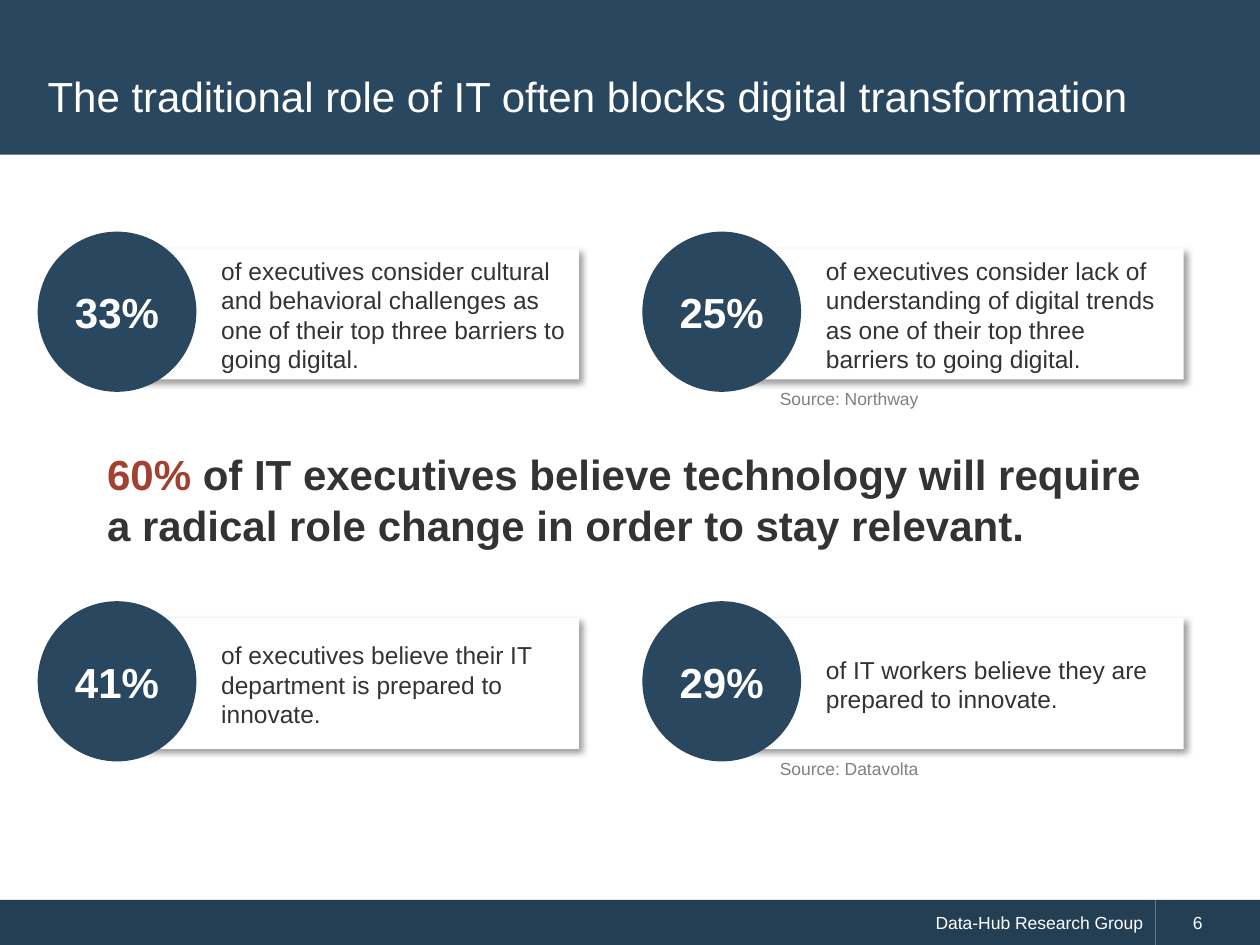
from lxml.etree import SubElement
from pptx import Presentation
from pptx.dml.color import RGBColor
from pptx.enum.shapes import MSO_SHAPE as Preset
from pptx.enum.text import MSO_ANCHOR as Anchor, PP_ALIGN as Align
from pptx.oxml.ns import qn
from pptx.util import Cm, Pt

THEME = {
    "font": "Arial",
    "navy": "29475F", "footer": "243F54", "white": "FFFFFF",
    "ink": "333333", "grey": "808080", "accent": "A24130", "shadow": "000000",
    "large": 24, "body": 14, "small": 10,
}

TITLE = "The traditional role of IT often blocks digital transformation"
STATS = [
    [("33%", "of executives consider cultural and behavioral challenges as "
             "one of their top three barriers to going digital."),
     ("25%", "of executives consider lack of understanding of digital trends "
             "as one of their top three barriers to going digital.")],
    [("41%", "of executives believe their IT department is prepared to innovate."),
     ("29%", "of IT workers believe they are prepared to innovate.")],
]
SOURCES = ["Source: Northway", "Source: Datavolta"]
HEADLINE = [
    ("60% ", "accent"),
    ("of IT executives believe technology will require a radical role "
     "change in order to stay relevant.", "ink"),
]
PUBLISHER = "Data-Hub Research Group"
PAGE_NUMBER = "6"

WIDTH, HEIGHT = 25.4, 19.05
COLUMNS = [0.76, 12.95]
ROWS = [4.67, 12.12]
CIRCLE = (3.2, 3.23)
CARD = (9.45, 2.64)
CARD_OFFSET = (1.46, 0.34)
SOURCE_LEFT, SOURCE_DROP = 15.47, 3.03
FOOTER_TOP, FOOTER_SPLIT = 18.14, 23.29


def color(name):
    return RGBColor.from_string(THEME[name])


def write(shape, spans, size, bold=False, align=Align.LEFT,
          anchor=Anchor.MIDDLE, left=0.25, top=0.13, bottom=0.13):
    frame = shape.text_frame
    layout = {"word_wrap": True, "vertical_anchor": anchor,
              "margin_left": Cm(left), "margin_right": Cm(0.25),
              "margin_top": Cm(top), "margin_bottom": Cm(bottom)}
    for name, value in layout.items():
        setattr(frame, name, value)
    para = frame.paragraphs[0]
    para.alignment = align
    for text, shade in spans:
        span = para.add_run()
        span.text = text
        span.font.color.rgb = color(shade)
        style = {"name": THEME["font"], "size": Pt(THEME[size]), "bold": bold}
        for name, value in style.items():
            setattr(span.font, name, value)


def add_block(page, preset, area, fill):
    block = page.shapes.add_shape(preset, *map(Cm, area))
    block.shadow.inherit = False
    block.fill.solid()
    block.fill.fore_color.rgb = color(fill)
    block.line.fill.background()
    return block


def add_text(page, area, spans, size, **options):
    box = page.shapes.add_textbox(*map(Cm, area))
    write(box, spans, size, **options)


def cast_shadow(block):
    effects = block.element.spPr.find(qn("a:effectLst"))
    shadow = SubElement(effects, qn("a:outerShdw"), blurRad=str(Pt(4)),
                        dist=str(Pt(3)), dir="2700000", algn="tl", rotWithShape="0")
    shade = SubElement(shadow, qn("a:srgbClr"), val=THEME["shadow"])
    SubElement(shade, qn("a:alpha"), val="40000")


def add_stat(page, left, top, figure, statement):
    card = add_block(page, Preset.RECTANGLE,
                     (left + CARD_OFFSET[0], top + CARD_OFFSET[1], *CARD), "white")
    cast_shadow(card)
    write(card, [(statement, "ink")], "body", left=2.24, bottom=0.1)
    circle = add_block(page, Preset.OVAL, (left, top, *CIRCLE), "navy")
    write(circle, [(figure, "white")], "large", bold=True, align=Align.CENTER)


def main():
    deck = Presentation()
    deck.slide_width, deck.slide_height = Cm(WIDTH), Cm(HEIGHT)
    page = deck.slides.add_slide(deck.slide_layouts[6])

    footer_height = HEIGHT - FOOTER_TOP
    publisher = add_block(page, Preset.RECTANGLE,
                          (0, FOOTER_TOP, FOOTER_SPLIT, footer_height), "footer")
    write(publisher, [(PUBLISHER, "white")], "small", align=Align.RIGHT)
    number = add_block(page, Preset.RECTANGLE,
                       (FOOTER_SPLIT, FOOTER_TOP, WIDTH - FOOTER_SPLIT, footer_height),
                       "footer")
    write(number, [(PAGE_NUMBER, "white")], "small", left=0.76)

    add_block(page, Preset.RECTANGLE, (0, 0, WIDTH, 3.12), "navy")
    add_text(page, (0.71, 0.71, 23.95, 2.44), [(TITLE, "white")], "large")

    for top, stats, source in zip(ROWS, STATS, SOURCES):
        add_text(page, (SOURCE_LEFT, top + SOURCE_DROP, 8.5, 0.69),
                 [(source, "grey")], "small", anchor=Anchor.TOP)
        for left, (figure, statement) in zip(COLUMNS, stats):
            add_stat(page, left, top, figure, statement)

    add_text(page, (1.91, 8.92, 21.54, 2.31), HEADLINE, "large",
             bold=True, anchor=Anchor.TOP)
    deck.save("out.pptx")


if __name__ == "__main__":
    main()
